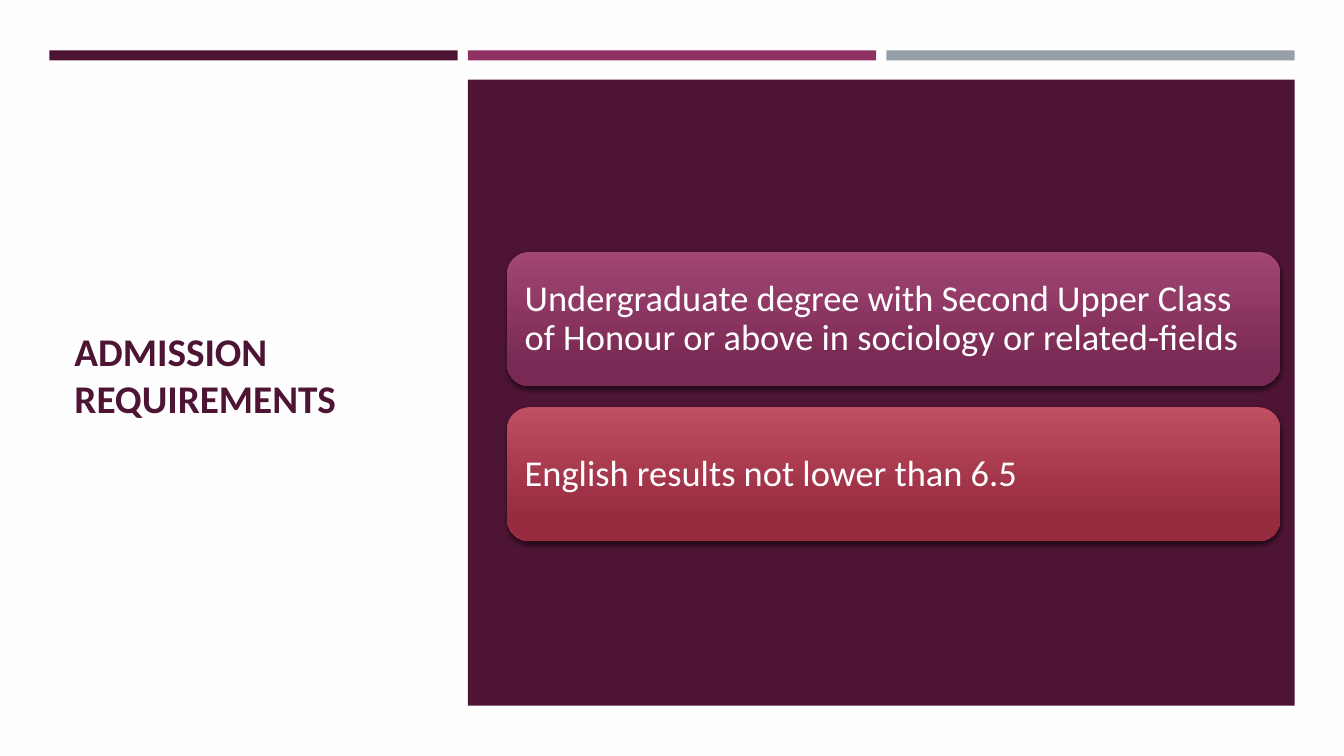
from lxml.etree import SubElement
from pptx import Presentation
from pptx.dml.color import RGBColor
from pptx.enum.shapes import MSO_SHAPE as Geo
from pptx.enum.text import MSO_ANCHOR as Anchor, PP_ALIGN as Align
from pptx.oxml.ns import qn
from pptx.util import Inches, Pt

PLUM = "4D1434"
BARS = [PLUM, "903163", "969FA7"]
CARDS = [
    ("Undergraduate degree with Second Upper Class of Honour "
     "or above in sociology or related-fields", "A24774", "792953"),
    ("English results not lower than 6.5", "BF4E61", "962A3F"),
]


def color(code):
    return RGBColor.from_string(code)


def block(slide, box, fill, geo=Geo.RECTANGLE):
    shape = slide.shapes.add_shape(geo, *map(Inches, box))
    shape.shadow.inherit = False
    shape.line.fill.background()
    shape.fill.solid()
    shape.fill.fore_color.rgb = color(fill)
    return shape


def write(frame, text, size, tint, bold=False):
    frame.word_wrap = True
    frame.vertical_anchor = Anchor.MIDDLE
    para = frame.paragraphs[0]
    para.alignment = Align.LEFT
    run = para.add_run()
    run.text = text
    font = run.font
    font.name, font.size, font.bold = "Calibri", Pt(size), bold
    font.color.rgb = color(tint)
    return para


def cast(shape):
    # Soft shadow straight below the shape
    effects = shape._element.spPr.find(qn("a:effectLst"))
    outer = SubElement(effects, qn("a:outerShdw"), blurRad=str(Pt(3)),
                       dist=str(Pt(2)), dir="5400000", rotWithShape="0")
    black = SubElement(outer, qn("a:srgbClr"), val="000000")
    SubElement(black, qn("a:alpha"), val="55000")


def bars(slide, box, gap=0.1):
    left, top, width, height = box
    each = (width - gap * (len(BARS) - 1)) / len(BARS)
    for i, fill in enumerate(BARS):
        block(slide, (left + i * (each + gap), top, each, height), fill)


def title(slide, box):
    frame = slide.shapes.add_textbox(*map(Inches, box)).text_frame
    write(frame, "ADMISSION REQUIREMENTS", 28, PLUM, bold=True)


def card(slide, box, text, start, end):
    shape = block(slide, box, start, Geo.ROUNDED_RECTANGLE)
    shape.fill.gradient()
    shape.fill.gradient_angle = 270
    stops = zip(shape.fill.gradient_stops, (0, 0.84), (start, end))
    for stop, spot, tint in stops:
        stop.position = spot
        stop.color.rgb = color(tint)
    cast(shape)
    frame = shape.text_frame
    frame.margin_left = frame.margin_right = Inches(0.11)
    frame.margin_top = frame.margin_bottom = Inches(0.11)
    write(frame, text, 26, "FFFFFF").line_spacing = 0.9


def panel(slide, box):
    block(slide, box, PLUM)
    left, top, width, height = box
    for i, (text, start, end) in enumerate(CARDS):
        spot = (left + 0.39, top + 1.71 + i * 1.54, width - 0.53, 1.33)
        card(slide, spot, text, start, end)


def main():
    prs = Presentation()
    prs.slide_width, prs.slide_height = Inches(13.33), Inches(7.5)
    slide = prs.slides.add_slide(prs.slide_layouts[6])

    # Backdrop
    block(slide, (0, 0, 13.33, 7.5), "FFFEFF")
    # Title on the left, bars on top, requirements on the right
    title(slide, (0.64, 1.14, 3.52, 5.15))
    bars(slide, (0.49, 0.5, 12.35, 0.1))
    panel(slide, (4.64, 0.79, 8.2, 6.21))

    prs.save("out.pptx")


if __name__ == "__main__":
    main()
